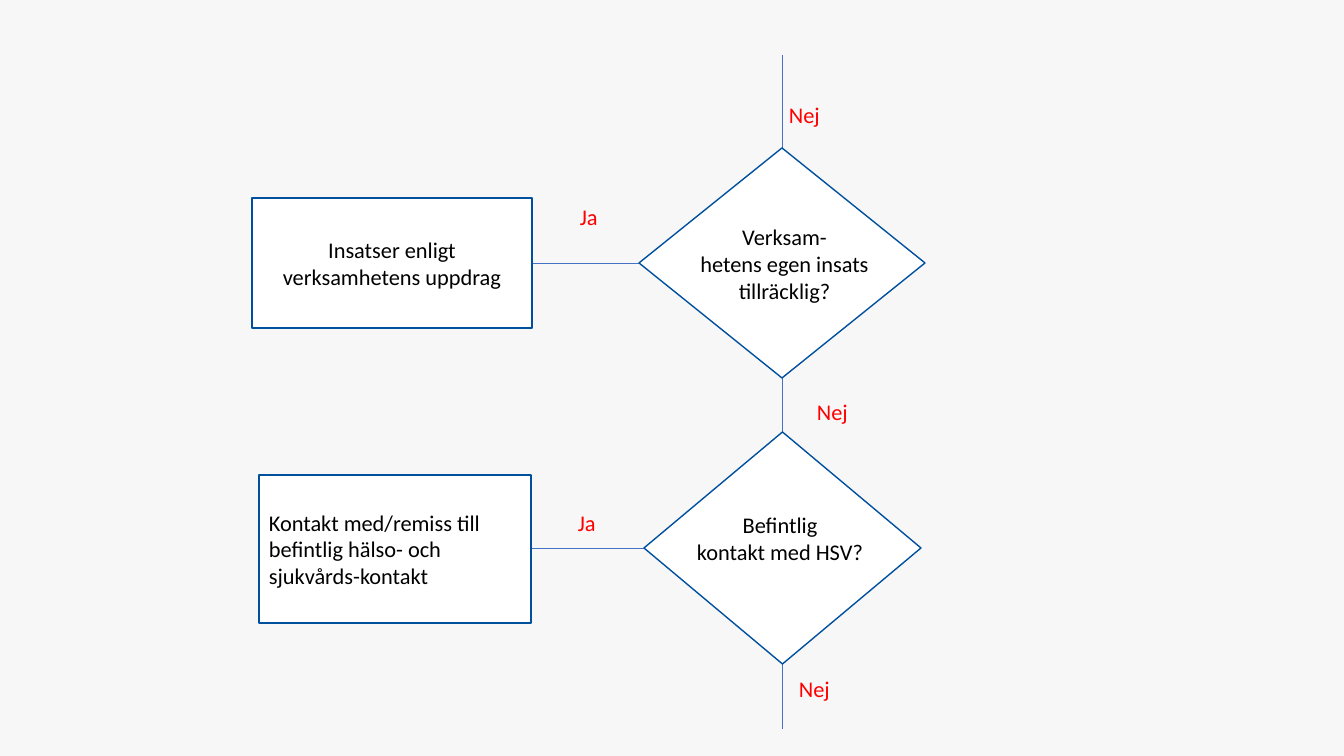
import pptx
import pptx.util
import pptx.dml.color
import pptx.enum.shapes
import pptx.enum.text
import pptx.oxml.ns
import lxml.etree

RGB = pptx.dml.color.RGBColor
SHAPE = pptx.enum.shapes.MSO_SHAPE
ALIGN = pptx.enum.text.PP_ALIGN
ANCHOR = pptx.enum.text.MSO_ANCHOR

PX = 914400 / 100.8
BACKGROUND = RGB(0xF7, 0xF7, 0xF7)
WHITE = RGB(0xFF, 0xFF, 0xFF)
BLACK = RGB(0x00, 0x00, 0x00)
RED = RGB(0xFF, 0x00, 0x00)
OUTLINE = RGB(0x00, 0x50, 0x9D)
CONNECTOR = RGB(0x44, 0x72, 0xC4)


def px(*lengths):
    """Turn pixel lengths into EMU."""
    return [pptx.util.Emu(round(n * PX)) for n in lengths]


def write(sp, text, color=BLACK, align=ALIGN.LEFT, anchor=ANCHOR.MIDDLE, wrap=True):
    """Fill a shape with text: \\n starts a paragraph, \\v breaks a line."""
    tf = sp.text_frame
    tf.word_wrap = wrap
    tf.vertical_anchor = anchor
    tf.text = text
    for p in tf.paragraphs:
        p.alignment = align
        for r in p.runs:
            r.font.name = "Calibri"
            r.font.size = pptx.util.Pt(16)
            r.font.color.rgb = color


prs = pptx.Presentation()
prs.slide_width, prs.slide_height = px(1344, 756)
s = prs.slides.add_slide(prs.slide_layouts[6])
s.background.fill.solid()
s.background.fill.fore_color.rgb = BACKGROUND

# Connectors: main column from top to bottom, then the two branches
axis = 782
for x1, y1, x2, y2 in [
    (axis, 55, axis, 148),
    (axis, 378, axis, 432),
    (axis, 664, axis, 729),
    (532, 263, 639, 263),
    (531, 548, 644, 548),
]:
    line = s.shapes.add_connector(pptx.enum.shapes.MSO_CONNECTOR.STRAIGHT, *px(x1, y1, x2, y2))
    line.line.color.rgb = CONNECTOR
    line.line.width = pptx.util.Pt(0.5)
    lxml.etree.SubElement(line._element.spPr, pptx.oxml.ns.qn("a:effectLst"))

# Decisions and actions
for kind, box, text, align in [
    (SHAPE.DIAMOND, (639, 148, 286, 230), "", ALIGN.CENTER),
    (SHAPE.RECTANGLE, (252, 198, 280, 130), "Insatser enligt verksamhetens uppdrag", ALIGN.CENTER),
    (SHAPE.DIAMOND, (644, 432, 277, 232), "", ALIGN.CENTER),
    (SHAPE.RECTANGLE, (259, 475, 272, 148),
     "Kontakt med/remiss till befintlig hälso- och sjukvårds-kontakt", ALIGN.LEFT),
]:
    sp = s.shapes.add_shape(kind, *px(*box))
    sp.shadow.inherit = False
    sp.fill.solid()
    sp.fill.fore_color.rgb = WHITE
    sp.line.color.rgb = OUTLINE
    sp.line.width = pptx.util.Pt(1)
    if text:
        write(sp, text, align=align)

# Questions lie in boxes wider than the diamonds' own text areas
for box, text in [
    ((659, 203, 251, 121), "Verksam-\nhetens egen insats tillräcklig?"),
    ((677, 477, 206, 122), "Befintlig\vkontakt med HSV?"),
]:
    write(s.shapes.add_textbox(*px(*box)), text, align=ALIGN.CENTER)

# Answers
for x, y, w, h, text in [
    (779, 96, 61, 40, "Nej"),
    (570, 198, 45, 40, "Ja"),
    (807, 393, 69, 44, "Nej"),
    (568, 504, 50, 44, "Ja"),
    (789, 670, 69, 44, "Nej"),
]:
    write(s.shapes.add_textbox(*px(x, y, w, h)), text, color=RED, anchor=ANCHOR.TOP, wrap=False)

prs.save("out.pptx")
